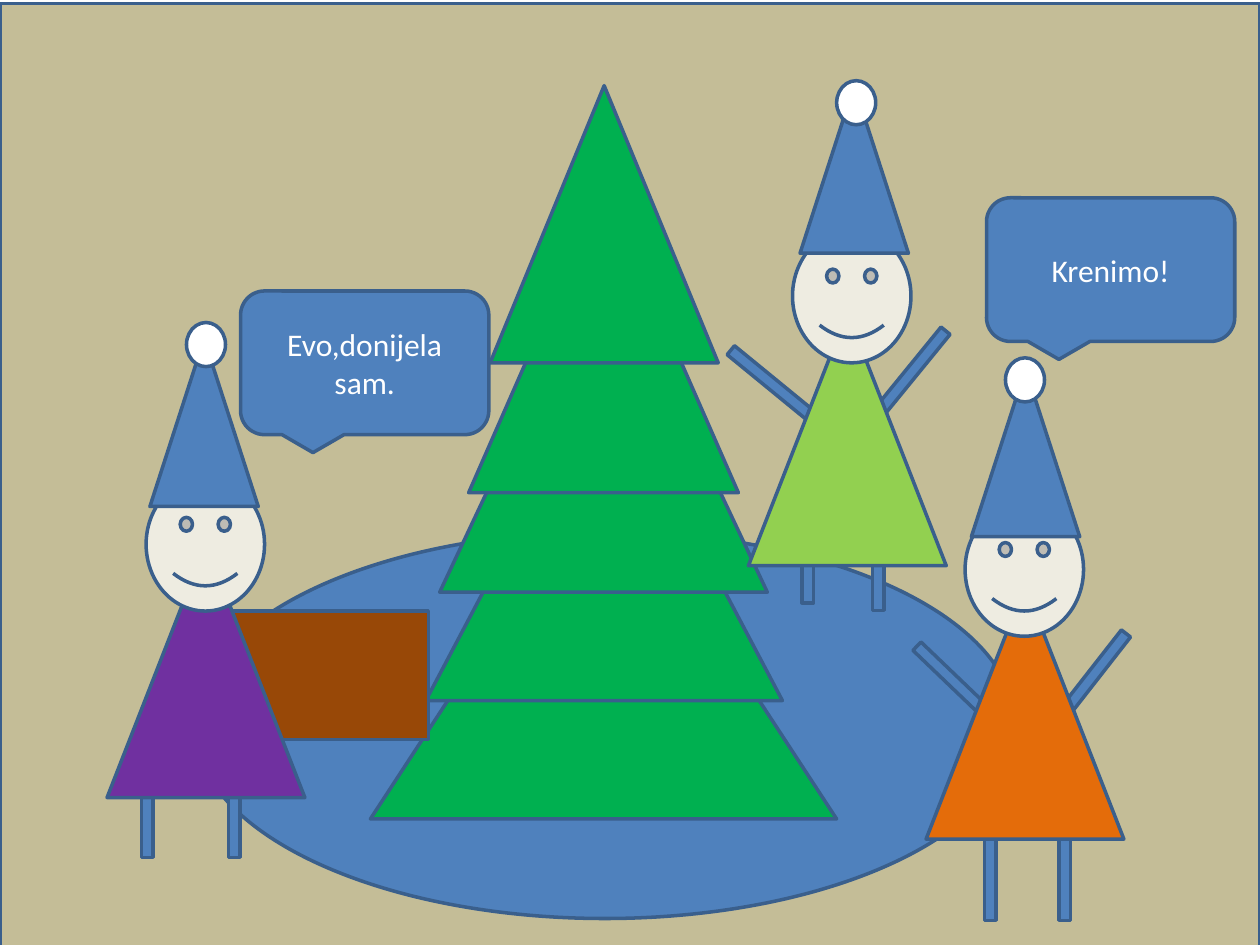
from dataclasses import dataclass

from pptx import Presentation
from pptx.dml.color import RGBColor
from pptx.enum.shapes import MSO_SHAPE
from pptx.enum.text import MSO_ANCHOR, PP_ALIGN
from pptx.util import Inches, Pt

RECT = MSO_SHAPE.RECTANGLE
OVAL = MSO_SHAPE.OVAL
CONE = MSO_SHAPE.ISOSCELES_TRIANGLE
STICK = MSO_SHAPE.MATH_MINUS
FACE = MSO_SHAPE.SMILEY_FACE
BUBBLE = MSO_SHAPE.ROUNDED_RECTANGULAR_CALLOUT
MIDDLE = MSO_ANCHOR.MIDDLE
CENTER = PP_ALIGN.CENTER

# The slide is a grid of 100 columns by 75 rows; all lengths are in cells.
COLS, ROWS, CELL = 100, 75, Inches(0.1)

BLUE, EDGE, WHITE = "4F81BD", "3A5F8C", "FFFFFF"
SAND, GREEN, SKIN, BROWN = "C4BD97", "00B050", "EEECE1", "984807"


@dataclass
class Box:
    left: float
    top: float
    width: float
    height: float


@dataclass
class Limb:
    left: float
    top: float
    turn: float = 90


@dataclass
class Elf:
    """Colour, limbs, and the top left corners of the body parts."""
    color: str
    limbs: list[Limb]
    dress: tuple[float, float]
    head: tuple[float, float]
    hat: tuple[float, float]
    bob: tuple[float, float]


@dataclass
class Speech:
    left: float
    top: float
    words: str


TREE = [
    Box(29.4, 36.7, 37, 28.3),
    Box(33.8, 28.8, 28.3, 26.8),
    Box(34.9, 19.4, 26, 27.6),
    Box(37.2, 14.7, 21.4, 24.4),
    Box(38.9, 6.8, 18.1, 22),
]
ARMS = [Limb(13.6, 53, 199.4), Limb(14, 49.4, 195.3)]
ORANGE = Elf(
    "E46C0A",
    [Limb(71.4, 65.8), Limb(77.3, 65.8), Limb(69.4, 53, 43.8), Limb(78.9, 52.5, 128)],
    (73.5, 46.5), (76.6, 39.9), (77.1, 29.3), (79.8, 28.4))
LIME = Elf(
    "92D050",
    [Limb(56.9, 40.6), Limb(62.5, 41.2), Limb(54.9, 29.2, 39.3), Limb(64.5, 28.4, 129.2)],
    (59.4, 24.8), (62.9, 18.2), (63.5, 6.8), (66.4, 6.4))
PURPLE = Elf(
    "7030A0", [Limb(4.5, 60.8), Limb(11.4, 60.8)],
    (8.5, 43.2), (11.6, 37.9), (11.9, 26.9), (14.8, 25.6))
TALK = [Speech(19.1, 23.1, "Evo,donijela sam."), Speech(78.3, 15.7, "Krenimo!")]


def paint(color: str) -> RGBColor:
    return RGBColor.from_string(color)


def cells(count: float) -> int:
    return round(count * CELL)


def draw(shapes, kind, box: Box, color: str, turn: float = 0):
    shape = shapes.add_shape(kind, cells(box.left), cells(box.top),
                             cells(box.width), cells(box.height))
    shape.shadow.inherit = False
    shape.fill.solid()
    shape.fill.fore_color.rgb = paint(color)
    shape.line.color.rgb = paint(EDGE)
    shape.line.width = Pt(2)
    shape.rotation = turn
    return shape


def draw_limbs(shapes, limbs: list[Limb]) -> None:
    for limb in limbs:
        draw(shapes, STICK, Box(limb.left, limb.top, 14.4, 3.9), BLUE, limb.turn)


def draw_tree(shapes) -> None:
    group = shapes.add_group_shape().shapes
    for tier in TREE:
        draw(group, CONE, tier, GREEN)


def draw_elf(shapes, elf: Elf) -> None:
    draw_limbs(shapes, elf.limbs)
    draw(shapes, CONE, Box(*elf.dress, 15.7, 20.1), elf.color)
    draw(shapes, FACE, Box(*elf.head, 9.4, 10.6), SKIN)
    draw(shapes, CONE, Box(*elf.hat, 8.6, 13.3), BLUE)
    draw(shapes, OVAL, Box(*elf.bob, 3.1, 3.5), WHITE)


def draw_speech(shapes, speech: Speech) -> None:
    bubble = draw(shapes, BUBBLE, Box(speech.left, speech.top, 19.7, 11.4), BLUE)
    frame = bubble.text_frame
    frame.word_wrap = True
    frame.vertical_anchor = MIDDLE
    line = frame.paragraphs[0]
    line.text = speech.words
    line.alignment = CENTER
    line.font.name = "Calibri"
    line.font.size = Pt(18)
    line.font.color.rgb = paint(WHITE)


def main() -> None:
    deck = Presentation()
    deck.slide_width, deck.slide_height = cells(COLS), cells(ROWS)
    shapes = deck.slides.add_slide(deck.slide_layouts[6]).shapes

    draw(shapes, RECT, Box(0, 0.3, COLS, ROWS), SAND)
    draw(shapes, OVAL, Box(15.4, 42.2, 65.2, 30.7), BLUE)
    draw_tree(shapes)
    draw_limbs(shapes, ARMS)
    for elf in (ORANGE, LIME):
        draw_elf(shapes.add_group_shape().shapes, elf)
    for speech in TALK:
        draw_speech(shapes, speech)

    group = shapes.add_group_shape().shapes
    draw(group, RECT, Box(17.4, 48.5, 16.6, 10.2), BROWN)
    draw_elf(group, PURPLE)

    deck.save("out.pptx")


if __name__ == "__main__":
    main()
